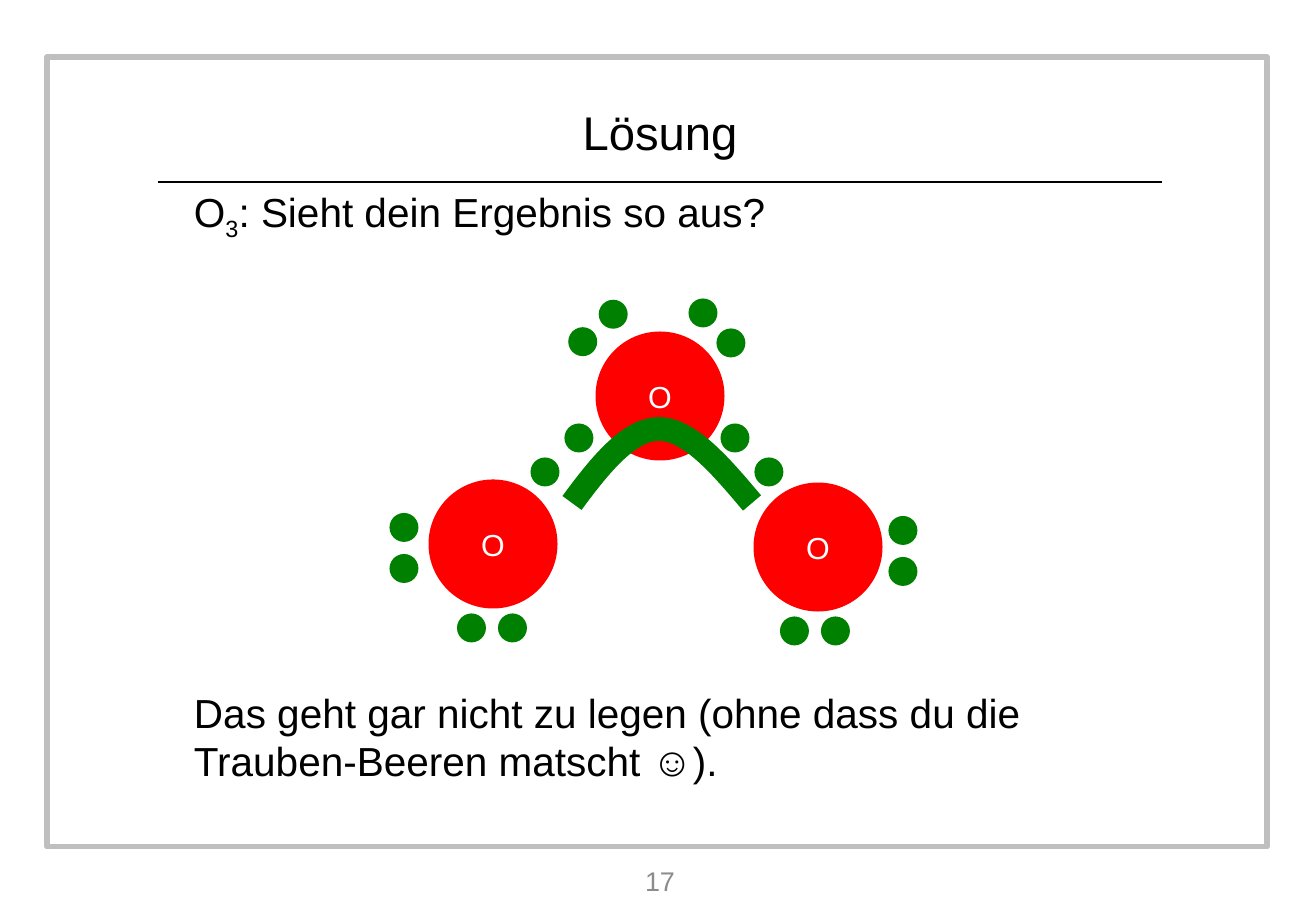
import math

import pptx
import pptx.dml.color
import pptx.enum.shapes
import pptx.enum.text
import pptx.oxml.ns
import pptx.util
from lxml import etree

EMU_PER_PX = 914400 / 121.5
SHAPES = pptx.enum.shapes.MSO_SHAPE
ALIGN = pptx.enum.text.PP_ALIGN
ANCHOR = pptx.enum.text.MSO_ANCHOR
BLACK, WHITE, RED, GREEN = "000000", "FFFFFF", "FF0000", "008000"
ATOM, ELECTRON = 129, 29  # diameters


def px(length):
    return pptx.util.Emu(round(length * EMU_PER_PX))


def color(hex_text):
    return pptx.dml.color.RGBColor.from_string(hex_text)


def set_line(line, hex_text, points):
    line.color.rgb = color(hex_text)
    line.width = pptx.util.Pt(points)


def write(frame, paragraphs, size, ink=BLACK, align=ALIGN.LEFT,
          anchor=ANCHOR.MIDDLE, wrap=True, gap=0):
    """Each paragraph is a list of (text, baseline) runs; gap separates paragraphs."""
    frame.word_wrap = wrap
    frame.auto_size = pptx.enum.text.MSO_AUTO_SIZE.NONE
    frame.vertical_anchor = anchor
    frame.margin_left = frame.margin_right = frame.margin_top = frame.margin_bottom = 0
    for index, runs in enumerate(paragraphs):
        paragraph = frame.add_paragraph() if index else frame.paragraphs[0]
        paragraph.alignment = align
        paragraph.space_before = pptx.util.Pt(gap if index else 0)
        for text, baseline in runs:
            run = paragraph.add_run()
            run.text = text
            run.font.name = "Arial"
            run.font.size = pptx.util.Pt(size)
            run.font.color.rgb = color(ink)
            if baseline:
                run.font._element.set("baseline", str(baseline))


def add_circle(slide, x, y, diameter, fill):
    """Draw a filled circle around the centre (x, y)."""
    circle = slide.shapes.add_shape(SHAPES.OVAL, px(x - diameter / 2), px(y - diameter / 2),
                                    px(diameter), px(diameter))
    circle.shadow.inherit = False
    circle.fill.solid()
    circle.fill.fore_color.rgb = color(fill)
    circle.line.fill.background()
    return circle


def add_electron_pair(slide, x, y, angle, distance):
    """Draw two electrons around (x, y), on a line at the given angle."""
    dx = distance / 2 * math.cos(math.radians(angle))
    dy = distance / 2 * math.sin(math.radians(angle))
    for side in (-1, 1):
        add_circle(slide, x + side * dx, y + side * dy, ELECTRON, GREEN)


def bezier(p0, p1, p2, p3, steps=20):
    for step in range(steps + 1):
        t = step / steps
        u = 1 - t
        yield tuple(u**3 * a + 3 * u * u * t * b + 3 * u * t * t * c + t**3 * d
                    for a, b, c, d in zip(p0, p1, p2, p3))


def add_page_frame(slide, left, top, width, height):
    # Grey border
    border = slide.shapes.add_shape(SHAPES.RECTANGLE, px(left), px(top), px(width), px(height))
    border.shadow.inherit = False
    border.fill.background()
    set_line(border.line, "BFBFBF", 3)
    # Page number below the border
    number = slide.shapes.add_textbox(px(left + width / 2 - 145), px(top + height + 10),
                                      px(296), px(47))
    write(number.text_frame, [[("17", 0)]], 16, ink="8C8C8C", align=ALIGN.CENTER)


def add_heading(slide, left, top, width, height):
    heading = slide.shapes.title
    heading.left, heading.top = px(left), px(top)
    heading.width, heading.height = px(width), px(height)
    write(heading.text_frame, [[("Lösung", 0)]], 28, align=ALIGN.CENTER, wrap=False)
    # Rule under the heading
    rule_y = px(top + height + 14)
    rule = slide.shapes.add_connector(pptx.enum.shapes.MSO_CONNECTOR.STRAIGHT,
                                      px(left), rule_y, px(left + width), rule_y)
    set_line(rule.line, BLACK, 1.5)
    etree.SubElement(rule._element.spPr, pptx.oxml.ns.qn("a:effectLst"))


def add_question(slide, left, top, width, height):
    question = slide.shapes.add_textbox(px(left), px(top), px(width), px(height))
    write(question.text_frame, [
        [("O", 0), ("3", -25000), (": Sieht dein Ergebnis so aus?", 0)],
        [("Das geht gar nicht zu legen (ohne dass du die "
          "Trauben-Beeren matscht ☺).", 0)],
    ], 24, anchor=ANCHOR.TOP, gap=264)


def add_ozone(slide, left, top):
    # Oxygen atoms
    for x, y in ((271, 98), (104, 246), (429, 249)):
        atom = add_circle(slide, left + x, top + y, ATOM, RED)
        write(atom.text_frame, [[("O", 0)]], 18, ink=WHITE, align=ALIGN.CENTER)
    # Lone pairs, then bonding pairs
    for x, y, angle, distance in (
            (209, 30, -42, 41), (328, 30, 47, 41),
            (15, 250, 90, 41), (103, 330, 0, 41),
            (514, 253, 90, 41), (426, 333, 0, 41),
            (173, 157, -45, 48), (363, 157, 45, 48)):
        add_electron_pair(slide, left + x, top + y, angle, distance)
    # Squashed berry across the two bonds
    points = [*bezier((183, 205), (211, 167), (240, 131), (270, 131)),
              *bezier((270, 131), (300, 131), (331, 167), (363, 205))]
    (start_x, start_y), *rest = [(px(left + x), px(top + y)) for x, y in points]
    builder = slide.shapes.build_freeform(start_x, start_y)
    builder.add_line_segments(rest, close=False)
    squashed_berry = builder.convert_to_shape()
    squashed_berry.shadow.inherit = False
    squashed_berry.fill.background()
    set_line(squashed_berry.line, GREEN, 14)


def main():
    deck = pptx.Presentation()
    deck.slide_width, deck.slide_height = px(1316), px(911)
    slide = deck.slides.add_slide(deck.slide_layouts[5])  # title only
    add_page_frame(slide, 47, 57, 1220, 790)
    add_heading(slide, 158, 96, 1004, 72)
    add_question(slide, 194, 187, 932, 590)
    add_ozone(slide, 389, 298)
    deck.save("out.pptx")


if __name__ == "__main__":
    main()
